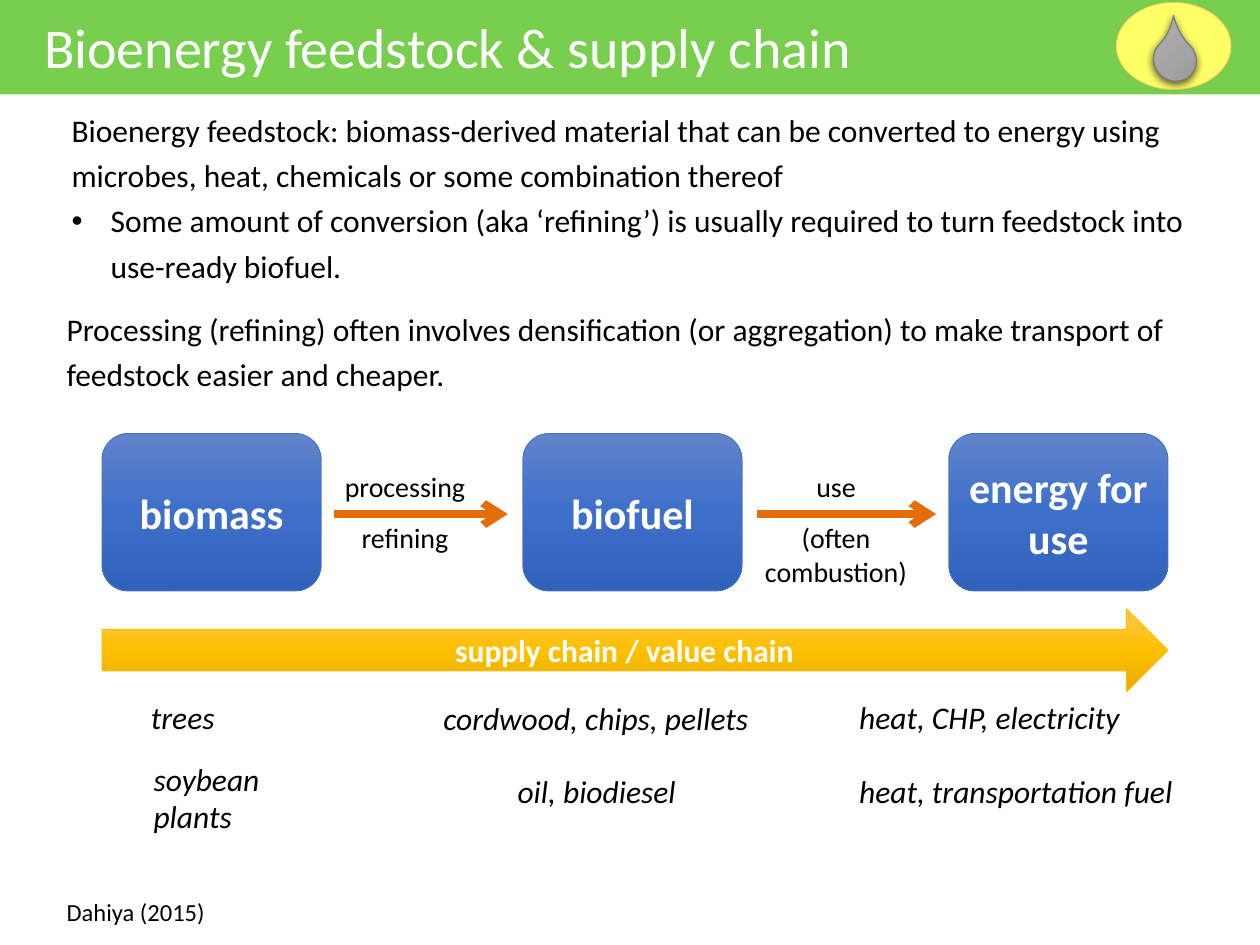
from pptx import Presentation
from pptx import util as u
from pptx.dml.color import RGBColor
from pptx.enum import shapes, text
from pptx.oxml import parse_xml
from pptx.oxml.ns import nsdecls, qn

Inches = u.Inches
SHAPE = shapes.MSO_SHAPE
LEFT, CENTER = text.PP_ALIGN.LEFT, text.PP_ALIGN.CENTER

COLORS = {
    "band": "78CE4D", "white": "FFFFFF", "black": "000000",
    "step_line": "4472C4", "chain_line": "FFC000", "arrow": "E46C0A",
    "badge": "FFFF66", "badge_line": "FFCC66", "drop_line": "7C7C7C",
}
GRADIENTS = {
    "step": ("6183CB", "3E70CA", "3062BB"),
    "chain": ("FFC64B", "FFC000", "E3AB00"),
    "drop": ("AFAFAF", "A5A5A5", "939393"),
}


def color(name):
    return RGBColor.from_string(COLORS[name])


def place(at):
    return [Inches(value) for value in at]


def write(frame, lines, size, ink="black", align=LEFT, spacing=None, gap=0, **style):
    """Fill a text frame, one paragraph a line, with gap points between them."""
    formats = {"name": "Calibri", "size": u.Pt(size), **style}
    for index, line in enumerate(lines):
        para = frame.add_paragraph() if index else frame.paragraphs[0]
        para.text = line
        para.alignment = align
        if spacing:
            para.line_spacing = spacing
        if index and gap:
            para.space_before = u.Pt(gap)
        for span in para.runs:
            span.font.color.rgb = color(ink)
            for key, value in formats.items():
                setattr(span.font, key, value)


def add_text(slide, at, lines, size=18, wrap=False, **style):
    box = slide.shapes.add_textbox(*place(at))
    frame = box.text_frame
    frame.word_wrap = wrap
    frame.auto_size = text.MSO_AUTO_SIZE.SHAPE_TO_FIT_TEXT
    write(frame, lines, size, **style)
    return box


def add_bullet(para, indent):
    props = para._p.get_or_add_pPr()
    props.set("marL", str(Inches(indent)))
    props.set("indent", str(-Inches(indent)))
    props.append(parse_xml(f'<a:buFont {nsdecls("a")} typeface="Arial"/>'))
    props.append(parse_xml(f'<a:buChar {nsdecls("a")} char="•"/>'))


def fill_gradient(shape, name):
    """Fill from top to bottom with three evenly spaced colours."""
    stops = "".join(
        f'<a:gs pos="{index * 50000}"><a:srgbClr val="{value}"/></a:gs>'
        for index, value in enumerate(GRADIENTS[name]))
    fill = parse_xml(
        f'<a:gradFill {nsdecls("a")} rotWithShape="1"><a:gsLst>{stops}</a:gsLst>'
        '<a:lin ang="5400000" scaled="0"/></a:gradFill>')
    shape.element.spPr.find(qn("a:prstGeom")).addnext(fill)


def add_shape(parent, kind, at, fill, line=None, width=0.5):
    """Add a preset shape; fill names a gradient or a plain colour."""
    shape = parent.shapes.add_shape(kind, *place(at))
    shape.shadow.inherit = False
    if fill in GRADIENTS:
        fill_gradient(shape, fill)
    else:
        shape.fill.solid()
        shape.fill.fore_color.rgb = color(fill)
    if line:
        shape.line.color.rgb = color(line)
        shape.line.width = u.Pt(width)
    else:
        shape.line.fill.background()
    return shape


def add_label(shape, label, size):
    shape.text_frame.word_wrap = True
    shape.text_frame.vertical_anchor = text.MSO_ANCHOR.MIDDLE
    write(shape.text_frame, [label], size, ink="white", align=CENTER, bold=True)


def add_arrow(slide, start, end, y):
    arrow = slide.shapes.add_connector(
        shapes.MSO_CONNECTOR.STRAIGHT, *place((start, y, end, y)))
    arrow.line.color.rgb = color("arrow")
    arrow.line.width = u.Pt(4.5)
    arrow.line._get_or_add_ln().append(
        parse_xml(f'<a:tailEnd {nsdecls("a")} type="arrow"/>'))
    arrow.element.spPr.append(parse_xml(f'<a:effectLst {nsdecls("a")}/>'))


def add_title(slide, title_text):
    title = slide.shapes.title
    title.left, title.top, title.width, title.height = place((0.25, 0.05, 7.72, 0.64))
    frame = title.text_frame
    frame.word_wrap = False
    frame.auto_size = text.MSO_AUTO_SIZE.SHAPE_TO_FIT_TEXT
    frame.vertical_anchor = text.MSO_ANCHOR.TOP
    write(frame, [title_text], 32, ink="white")
    band = add_shape(slide, SHAPE.RECTANGLE, (0, 0, 10, 0.75), "band")
    title.element.addprevious(band.element)


def add_drop_badge(slide):
    badge = slide.shapes.add_group_shape()
    add_shape(badge, SHAPE.OVAL, (8.86, 0.02, 0.91, 0.69), "badge", "badge_line")
    drop = add_shape(badge, SHAPE.TEAR, (9.16, 0.3, 0.33, 0.35), "drop", "drop_line", 0.75)
    drop.adjustments[0] = 1.465
    drop.rotation = 314.8
    drop.element.spPr.find(qn("a:effectLst")).append(parse_xml(
        f'<a:outerShdw {nsdecls("a")} blurRad="{u.Pt(4.5)}" dist="{u.Pt(1.5)}" '
        'dir="5400000" algn="ctr" rotWithShape="0"><a:srgbClr val="000000">'
        '<a:alpha val="63000"/></a:srgbClr></a:outerShdw>'))


def add_supply_chain(slide):
    for left, label in ((0.81, "biomass"), (4.15, "biofuel"), (7.53, "energy for use")):
        step = add_shape(slide, SHAPE.ROUNDED_RECTANGLE, (left, 3.44, 1.74, 1.25),
                         "step", "step_line")
        add_label(step, label, 24)
    for start, end in ((2.65, 4.03), (6.01, 7.43)):
        add_arrow(slide, start, end, 4.08)
    for at, lines in (
        ((2.63, 3.68, 1.17, 0.77), ["processing", "refining"]),
        ((5.96, 3.68, 1.35, 1.04), ["use", "(often\vcombustion)"]),
    ):
        add_text(slide, at, lines, size=16, align=CENTER, gap=10)
    chain = add_shape(slide, SHAPE.RIGHT_ARROW, (0.81, 4.83, 8.46, 0.66),
                      "chain", "chain_line")
    add_label(chain, "supply chain / value chain", 18)


def main():
    deck = Presentation()
    deck.slide_width, deck.slide_height = Inches(10), Inches(7.5)
    slide = deck.slides.add_slide(deck.slide_layouts[5])

    add_title(slide, "Bioenergy feedstock & supply chain")
    add_drop_badge(slide)
    definition = add_text(slide, (0.47, 0.77, 9.13, 1.54), [
        "Bioenergy feedstock: biomass-derived material that can be converted to energy "
        "using microbes, heat, chemicals or some combination thereof",
        "Some amount of conversion (aka ‘refining’) is usually required to turn "
        "feedstock into use-ready biofuel.",
    ], wrap=True, spacing=1.2)
    add_bullet(definition.text_frame.paragraphs[1], 0.31)
    add_text(slide, (0.43, 2.35, 9.13, 0.81), [
        "Processing (refining) often involves densification (or aggregation) to make "
        "transport of feedstock easier and cheaper.",
    ], wrap=True, spacing=1.2)

    add_supply_chain(slide)
    for at, example in (
        ((1.1, 5.49, 0.77, 0.4), "trees"),
        ((3.42, 5.5, 2.65, 0.4), "cordwood, chips, pellets"),
        ((6.72, 5.49, 2.29, 0.4), "heat, CHP, electricity"),
        ((1.12, 5.98, 1.11, 0.71), "soybean \vplants"),
        ((4.01, 6.08, 1.47, 0.4), "oil, biodiesel"),
        ((6.72, 6.08, 2.72, 0.4), "heat, transportation fuel"),
    ):
        add_text(slide, at, [example], italic=True)
    add_text(slide, (0.43, 7.07, 1.31, 0.34), ["Dahiya (2015)"], size=14)

    deck.save("out.pptx")


if __name__ == "__main__":
    main()
